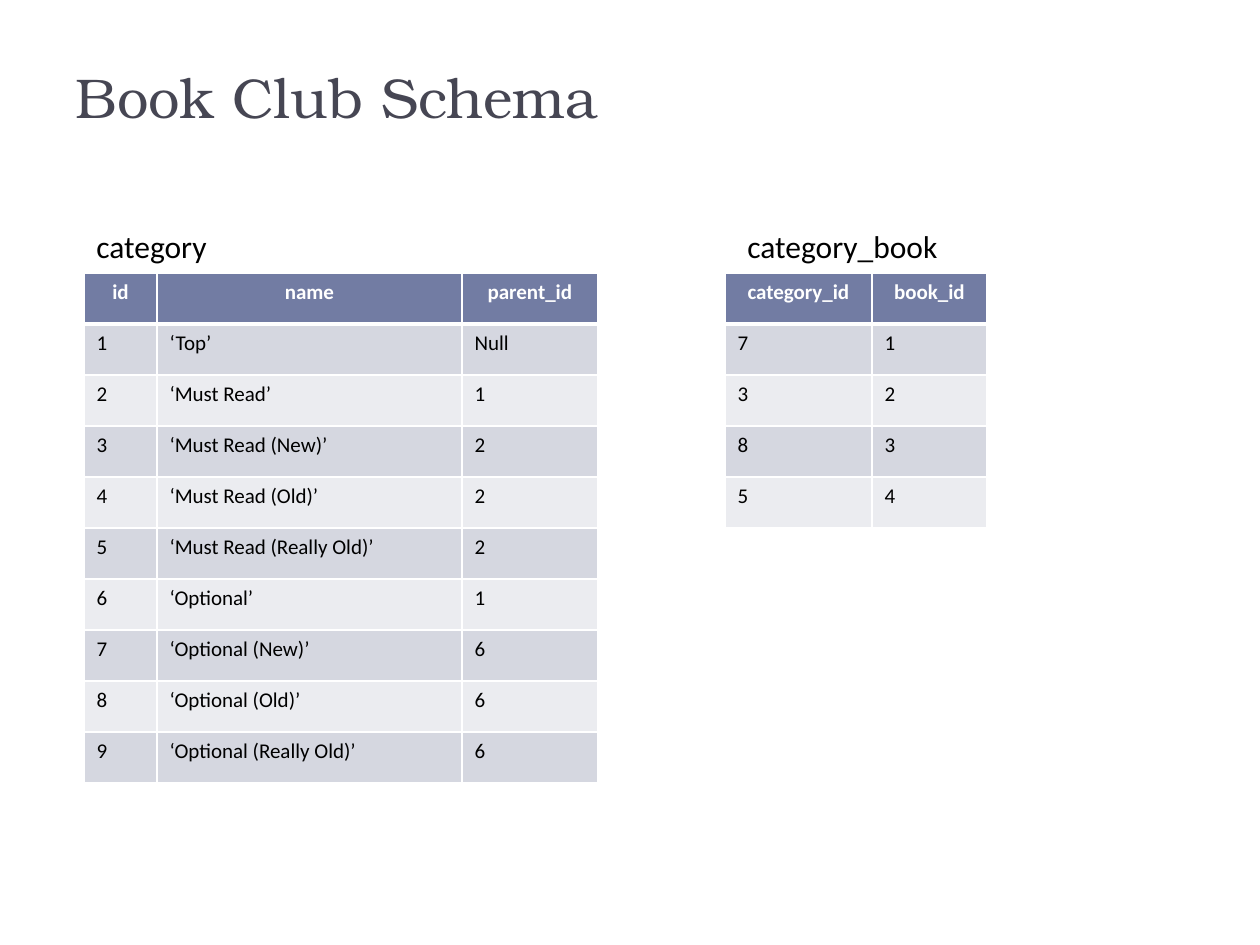
from dataclasses import dataclass

from lxml.etree import SubElement
from pptx import Presentation
from pptx.dml.color import RGBColor
from pptx.enum.text import MSO_ANCHOR, MSO_AUTO_SIZE, PP_ALIGN
from pptx.oxml.ns import qn
from pptx.slide import Slide
from pptx.table import _Cell
from pptx.text.text import _Paragraph
from pptx.util import Emu, Pt

INK = RGBColor(0x46, 0x46, 0x53)
BLACK = RGBColor(0, 0, 0)
WHITE = RGBColor(0xFF, 0xFF, 0xFF)
HEAD = RGBColor(0x72, 0x7C, 0xA3)
DARK = RGBColor(0xD5, 0xD7, 0xE0)
LIGHT = RGBColor(0xEB, 0xEC, 0xF0)
SANS = "Calibri"
SERIF = "TeX Gyre Bonum"
ROW = 51


@dataclass(frozen=True)
class Grid:
    name: str
    label: tuple[int, int]
    left: int
    cols: tuple[int, ...]
    rows: tuple[tuple[str, ...], ...]


GRIDS = (
    Grid("category", (84, 146), 84, (73, 305, 136), (
        ("id", "name", "parent_id"),
        ("1", "‘Top’", "Null"),
        ("2", "‘Must Read’", "1"),
        ("3", "‘Must Read (New)’", "2"),
        ("4", "‘Must Read (Old)’", "2"),
        ("5", "‘Must Read (Really Old)’", "2"),
        ("6", "‘Optional’", "1"),
        ("7", "‘Optional (New)’", "6"),
        ("8", "‘Optional (Old)’", "6"),
        ("9", "‘Optional (Really Old)’", "6"),
    )),
    Grid("category_book", (735, 233), 725, (147, 115), (
        ("category_id", "book_id"),
        ("7", "1"),
        ("3", "2"),
        ("8", "3"),
        ("5", "4"),
    )),
)


def px(num: int) -> Emu:
    return Emu(round(num * 914400 / 126))


def write(para: _Paragraph, text: str, size: int, color: RGBColor,
          face: str = SANS, bold: bool = False) -> None:
    run = para.add_run()
    run.text = text
    run.font.size = Pt(size)
    run.font.name = face
    run.font.bold = bold
    run.font.color.rgb = color


def edge(cell: _Cell, side: str, width: int) -> None:
    line = SubElement(cell._tc.get_or_add_tcPr(), qn(f"a:ln{side}"), w=str(Pt(width)))
    fill = SubElement(line, qn("a:solidFill"))
    SubElement(fill, qn("a:srgbClr"), val=str(WHITE))


def paint(cell: _Cell, text: str, row: int) -> None:
    thick = {0: "B", 1: "T"}.get(row)
    for side in "LRTB":
        edge(cell, side, 3 if side == thick else 1)
    cell.fill.solid()
    cell.fill.fore_color.rgb = HEAD if row == 0 else DARK if row % 2 else LIGHT
    para = cell.text_frame.paragraphs[0]
    para.alignment = PP_ALIGN.LEFT if row else PP_ALIGN.CENTER
    write(para, text, 12, BLACK if row else WHITE, bold=row == 0)


def draw(slide: Slide, grid: Grid) -> None:
    count = len(grid.rows)
    table = slide.shapes.add_table(
        count, len(grid.cols), px(grid.left), px(273),
        px(sum(grid.cols)), px(count * ROW)).table
    for col, width in zip(table.columns, grid.cols):
        col.width = px(width)
    for row, texts in enumerate(grid.rows):
        table.rows[row].height = px(ROW)
        for col, text in enumerate(texts):
            paint(table.cell(row, col), text, row)
    left, width = grid.label
    frame = slide.shapes.add_textbox(px(left), px(221), px(width), px(51)).text_frame
    frame.word_wrap = False
    frame.auto_size = MSO_AUTO_SIZE.SHAPE_TO_FIT_TEXT
    write(frame.paragraphs[0], grid.name, 18, BLACK)


def main() -> None:
    deck = Presentation()
    deck.slide_width, deck.slide_height = px(1260), px(945)
    slide = deck.slides.add_slide(deck.slide_layouts[5])
    title = slide.shapes.title
    title.left, title.top, title.width, title.height = px(63), px(0), px(1134), px(136)
    frame = title.text_frame
    frame.vertical_anchor = MSO_ANCHOR.BOTTOM
    para = frame.paragraphs[0]
    para.alignment = PP_ALIGN.LEFT
    write(para, "Book Club Schema", 32, INK, SERIF)
    for grid in GRIDS:
        draw(slide, grid)
    deck.save("out.pptx")


if __name__ == "__main__":
    main()
